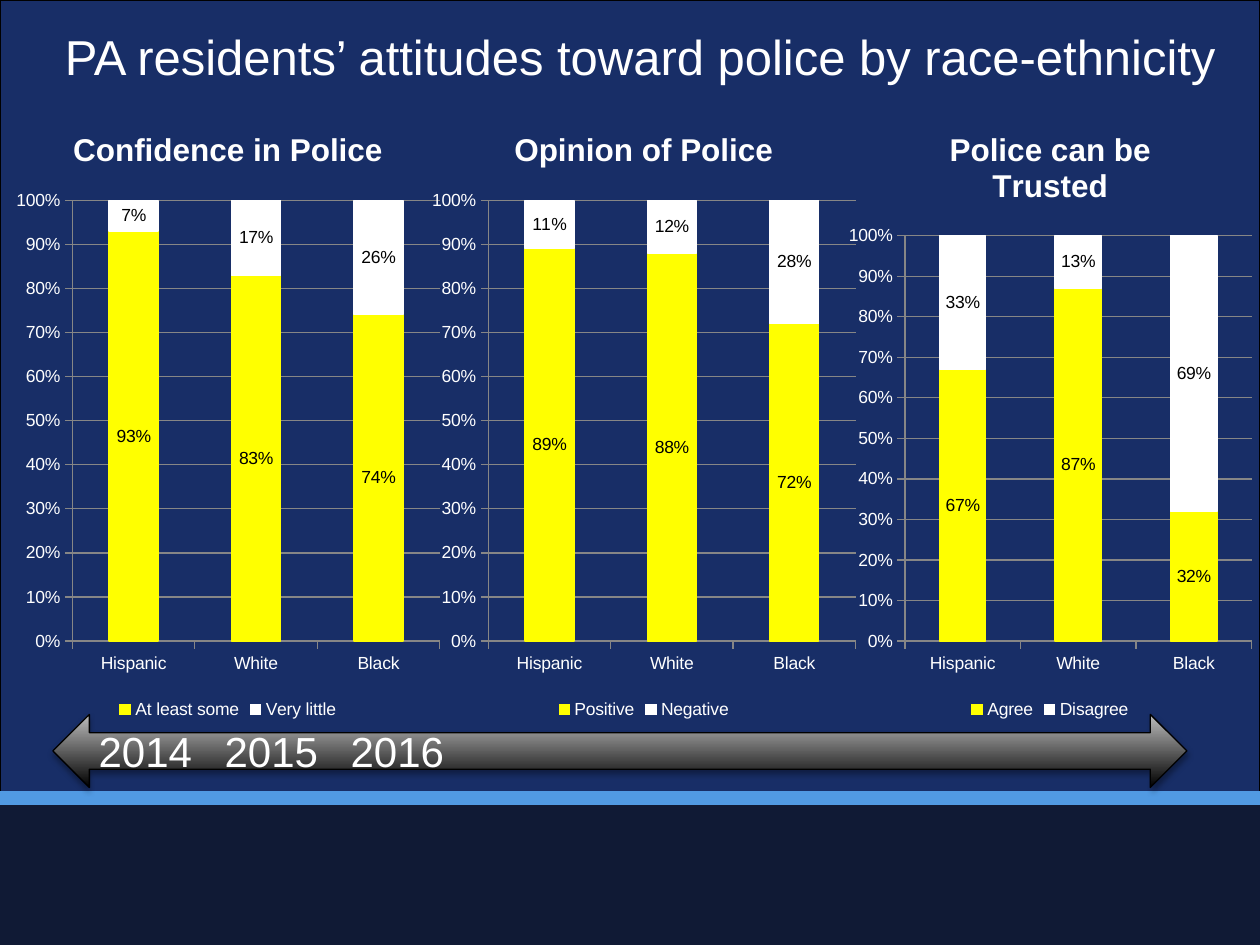
"""Build a slide of three stacked column charts above a timeline arrow."""
from dataclasses import dataclass

import lxml.etree
import pptx
import pptx.chart.data
import pptx.dml.color
import pptx.enum.chart
import pptx.enum.shapes
import pptx.enum.text
import pptx.oxml
import pptx.oxml.ns
import pptx.util

Inches = pptx.util.Inches
Pt = pptx.util.Pt
COLORS = {
    "navy": "182E67", "footer": "101A35", "rule": "519AE3", "white": "FFFFFF",
    "black": "000000", "silver": "BDBDBD", "yellow": "FFFF00", "grid": "868686",
}
FONT = "Arial"
PERCENT = "###0%"
CATEGORIES = ("Hispanic", "White", "Black")
CHART_TOP, CHART_HEIGHT = 0.83, 4.92
BAND_TOP = 6.33
SHADOW = (
    '<a:effectLst xmlns:a="http://schemas.openxmlformats.org/drawingml/2006/main">'
    '<a:outerShdw blurRad="40000" dist="23000" dir="5400000" rotWithShape="0">'
    '<a:srgbClr val="000000"><a:alpha val="35000"/></a:srgbClr>'
    "</a:outerShdw></a:effectLst>"
)


@dataclass(frozen=True)
class Survey:
    """One opinion chart with its place and its two answers."""
    title: str
    left: float
    width: float
    answers: dict[str, tuple[float, ...]]


SURVEYS = (
    Survey("Confidence in Police", 0.06, 3.5,
           {"At least some": (0.93, 0.83, 0.74), "Very little": (0.07, 0.17, 0.26)}),
    Survey("Opinion of Police", 3.36, 3.5,
           {"Positive": (0.89, 0.88, 0.72), "Negative": (0.11, 0.12, 0.28)}),
    Survey("Police can be Trusted", 6.67, 3.33,
           {"Agree": (0.67, 0.87, 0.32), "Disagree": (0.33, 0.13, 0.69)}),
)


def rgb(name: str) -> pptx.dml.color.RGBColor:
    """Return the named colour."""
    return pptx.dml.color.RGBColor.from_string(COLORS[name])


def set_attrs(target, **values) -> None:
    """Set each given attribute on the target."""
    for name, value in values.items():
        setattr(target, name, value)


def set_font(font, size: float, color: str = "white", bold: bool = False) -> None:
    """Format a font."""
    set_attrs(font, name=FONT, size=Pt(size), bold=bold)
    font.color.rgb = rgb(color)


def set_line(line, color: str, width: float = 0.75) -> None:
    """Format an outline or a rule."""
    line.color.rgb = rgb(color)
    line.width = Pt(width)


def add_band(s, top: float, height: float, color: str):
    """Add a full-width rectangle without an outline."""
    band = s.shapes.add_shape(pptx.enum.shapes.MSO_SHAPE.RECTANGLE,
                              0, Inches(top), Inches(10), Inches(height))
    band.shadow.inherit = False
    band.fill.solid()
    band.fill.fore_color.rgb = rgb(color)
    band.line.fill.background()
    return band


def add_backdrop(s) -> None:
    """Add the two bands and the rule between them."""
    set_line(add_band(s, 0, BAND_TOP, "navy").line, "black")
    add_band(s, BAND_TOP, 7.5 - BAND_TOP, "footer")
    rule = s.shapes.add_connector(pptx.enum.shapes.MSO_CONNECTOR.STRAIGHT,
                                  0, Inches(BAND_TOP), Inches(10), Inches(BAND_TOP))
    set_line(rule.line, "rule", 8)
    lxml.etree.SubElement(rule._element.spPr, pptx.oxml.ns.qn("a:effectLst"))


def add_title(s, text: str) -> None:
    """Add the slide title."""
    tf = s.shapes.add_textbox(Inches(0.29), Inches(0.16), Inches(9.58), Inches(0.67)).text_frame
    tf.word_wrap = True
    p = tf.paragraphs[0]
    p.alignment = pptx.enum.text.PP_ALIGN.CENTER
    r = p.add_run()
    r.text = text
    set_font(r.font, 28)


def add_timeline(s, years: tuple[str, ...]) -> None:
    """Add the double arrow with the years set on tab stops."""
    arrow = s.shapes.add_shape(pptx.enum.shapes.MSO_SHAPE.LEFT_RIGHT_ARROW,
                               Inches(0.42), Inches(5.67), Inches(9), Inches(0.58))
    arrow.fill.gradient()
    arrow.fill.gradient_angle = 90
    for stop, color in zip(arrow.fill.gradient_stops, ("black", "silver")):
        stop.color.rgb = rgb(color)
    set_line(arrow.line, "black")
    arrow._element.spPr.append(pptx.oxml.parse_xml(SHADOW))
    tf = arrow.text_frame
    set_attrs(tf, word_wrap=True, vertical_anchor=pptx.enum.text.MSO_ANCHOR.MIDDLE)
    p = tf.paragraphs[0]
    p.alignment = pptx.enum.text.PP_ALIGN.LEFT
    props = p._p.get_or_add_pPr()
    props.set("marL", str(Inches(0.12)))
    props.set("indent", "0")
    tabs = lxml.etree.SubElement(props, pptx.oxml.ns.qn("a:tabLst"))
    for pos, align in ((4.13, "ctr"), (8.25, "r")):
        lxml.etree.SubElement(tabs, pptx.oxml.ns.qn("a:tab"), pos=str(Inches(pos)), algn=align)
    r = p.add_run()
    r.text = "\t".join(years)
    set_font(r.font, 24)


def add_survey(s, survey: Survey) -> None:
    """Add one stacked column chart."""
    data = pptx.chart.data.CategoryChartData(number_format=PERCENT)
    data.categories = CATEGORIES
    for name, values in survey.answers.items():
        data.add_series(name, values)
    chart = s.shapes.add_chart(pptx.enum.chart.XL_CHART_TYPE.COLUMN_STACKED,
                               Inches(survey.left), Inches(CHART_TOP),
                               Inches(survey.width), Inches(CHART_HEIGHT), data).chart
    set_font(chart.font, 10)
    set_attrs(chart, has_title=True, has_legend=True)
    tf = chart.chart_title.text_frame
    tf.text = survey.title
    set_font(tf.paragraphs[0].runs[0].font, 18, bold=True)
    chart.chart_title.include_in_layout = False
    set_attrs(chart.legend, position=pptx.enum.chart.XL_LEGEND_POSITION.BOTTOM,
              include_in_layout=False)
    for axis in (chart.category_axis, chart.value_axis):
        axis.major_tick_mark = pptx.enum.chart.XL_TICK_MARK.OUTSIDE
        set_line(axis.format.line, "grid")
    set_attrs(chart.value_axis, minimum_scale=0, maximum_scale=1, major_unit=0.1,
              has_major_gridlines=True)
    set_line(chart.value_axis.major_gridlines.format.line, "grid")
    set_attrs(chart.value_axis.tick_labels, number_format=PERCENT, number_format_is_linked=False)
    plot = chart.plots[0]
    set_attrs(plot, gap_width=150, overlap=100, vary_by_categories=False)
    for series, color in zip(plot.series, ("yellow", "white")):
        series.format.fill.solid()
        series.format.fill.fore_color.rgb = rgb(color)
        set_line(series.format.line, color)
        labels = series.data_labels
        set_attrs(labels, show_value=True, number_format=PERCENT, number_format_is_linked=False,
                  position=pptx.enum.chart.XL_LABEL_POSITION.CENTER)
        set_font(labels.font, 10, "black")


def main() -> None:
    """Build and save the slide."""
    prs = pptx.Presentation()
    set_attrs(prs, slide_width=Inches(10), slide_height=Inches(7.5))
    s = prs.slides.add_slide(prs.slide_layouts[6])
    add_backdrop(s)
    add_title(s, "PA residents’ attitudes toward police by race-ethnicity")
    add_timeline(s, ("2014", "2015", "2016"))
    for survey in SURVEYS:
        add_survey(s, survey)
    prs.save("out.pptx")


if __name__ == "__main__":
    main()
